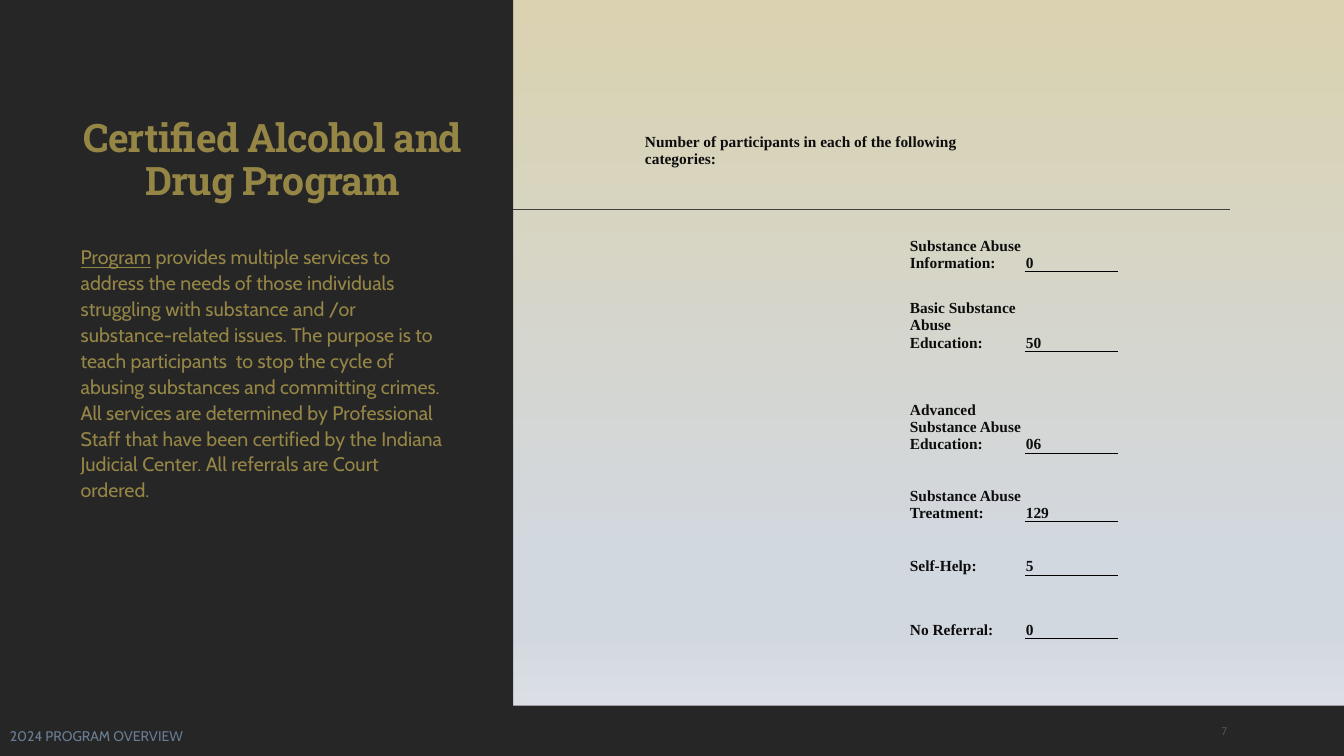
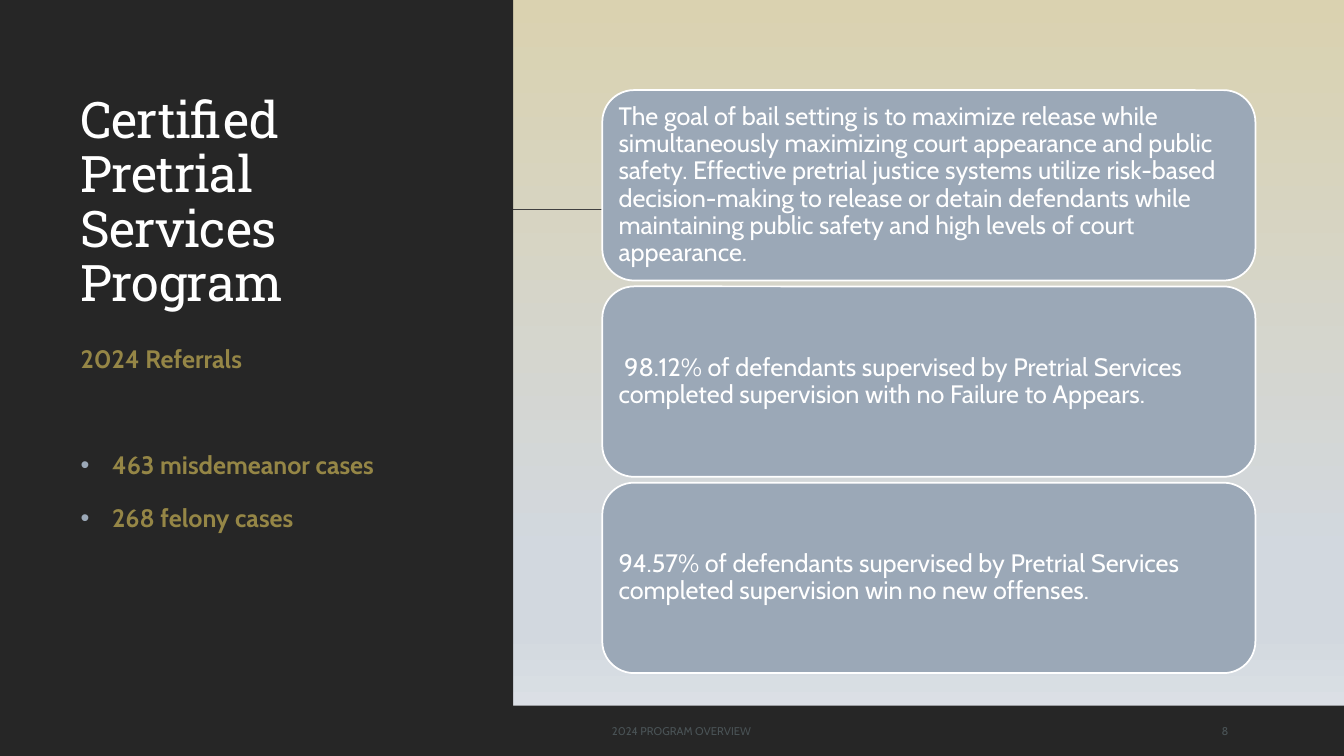
"""Builds two program overview slides: alcohol and drug services, and pretrial services."""
from lxml import etree
from pptx import Presentation
from pptx import util as u
from pptx.dml.color import RGBColor
from pptx.enum import shapes, text
from pptx.oxml import ns

Pt = u.Pt
CHARCOAL = RGBColor(0x26, 0x26, 0x26)
RULE_GRAY = RGBColor(0x40, 0x40, 0x40)
GOLD = RGBColor(0x95, 0x86, 0x46)
WHITE = RGBColor(0xFF, 0xFF, 0xFF)
BLACK = RGBColor(0x00, 0x00, 0x00)
TABLE_INK = RGBColor(0x0D, 0x0D, 0x0D)
STEEL = RGBColor(0x9B, 0xA8, 0xB7)
SLATE = RGBColor(0x6A, 0x7D, 0x93)
FOOTER_GRAY = RGBColor(0x4A, 0x53, 0x56)
SAND, MIST, PALE = (RGBColor(0xDA, 0xD2, 0xB0), RGBColor(0xD2, 0xD8, 0xDF),
                    RGBColor(0xE1, 0xE5, 0xE9))
BACKDROP = [(0, SAND), (74, MIST), (83, MIST), (100, PALE)]
HEADING_FONT, BODY_FONT, TABLE_FONT = "Roboto Slab", "Cabin", "Times New Roman"
SLIDE_W, SLIDE_H = 960, 540
MARGIN, TEXT_W = 50.4, 277.2
FOOTER = "2024 PROGRAM OVERVIEW"
NO_GRID_STYLE = "{2D5ABB26-0587-4C30-8999-92F81FD0307C}"

COLUMNS = [3.6, 42.5, 77, 29.5, 36.7, 82.8, 66.2]
ROWS = [27.4, 31, 25.2, 49, 56.9, 72.7, 49, 38.2, 45.4]
CATEGORIES = [
    ("Substance Abuse Information:", "0"),
    ("Basic Substance Abuse Education:", "50"),
    ("Advanced Substance Abuse Education:", "06"),
    ("Substance Abuse Treatment:", "129"),
    ("Self-Help:", "5"),
    ("No Referral:", "0"),
]
SERVICES = (
    " provides multiple services to address the needs of those individuals "
    "struggling with substance and /or substance-related issues. The purpose is to "
    "teach participants  to stop the cycle of abusing substances and committing "
    "crimes.  All services are determined by Professional Staff that have been "
    "certified by the Indiana Judicial Center. All referrals are Court ordered."
)
GOALS = [
    "The goal of bail setting is to maximize release while simultaneously maximizing "
    "court appearance and public safety. Effective pretrial justice systems utilize "
    "risk-based decision-making to release or detain defendants while maintaining "
    "public safety and high levels of court appearance.",
    " 98.12% of defendants supervised by Pretrial Services completed supervision with "
    "no Failure to Appears.",
    "94.57% of defendants supervised by Pretrial Services completed supervision win no "
    "new offenses.",
]


def add_child(parent, tag, **attributes):
    """Append a DrawingML element and return it."""
    return etree.SubElement(parent, ns.qn(tag), attributes)


def style_runs(paragraph, font, size, color, bold=False):
    """Format every run of a paragraph."""
    for run in paragraph.runs:
        run.font.name, run.font.size, run.font.bold = font, Pt(size), bold
        run.font.color.rgb = color


def place(shape, left, top, width, height):
    """Move and size a shape."""
    shape.left, shape.top, shape.width, shape.height = map(Pt, (left, top, width, height))


def paint_backdrop(master):
    """Give the master its vertical gradient."""
    fill = master.background.fill
    fill.gradient()
    fill.gradient_angle = 270
    stops = master._element.find(".//" + ns.qn("a:gsLst"))
    for stop in list(stops):
        stops.remove(stop)
    for percent, color in BACKDROP:
        stop = add_child(stops, "a:gs", pos=str(percent * 1000))
        add_child(stop, "a:srgbClr", val=str(color))


def add_band(slide, left, top, width, height):
    """Draw a plain dark rectangle."""
    band = slide.shapes.add_shape(shapes.MSO_SHAPE.RECTANGLE,
                                  Pt(left), Pt(top), Pt(width), Pt(height))
    band.shadow.inherit = False
    band.fill.solid()
    band.fill.fore_color.rgb = CHARCOAL
    band.line.fill.background()
    return band


def add_rule(slide, left, right, y):
    """Draw the thin horizontal rule."""
    rule = slide.shapes.add_connector(shapes.MSO_CONNECTOR.STRAIGHT,
                                      Pt(left), Pt(y), Pt(right), Pt(y))
    rule.line.color.rgb = RULE_GRAY
    rule.line.width = Pt(1)
    add_child(rule._element.spPr, "a:effectLst")
    return rule


def furnish_layout(layout, slide):
    """Build the shared bands and rule, then hand them to the layout."""
    furniture = [
        add_band(slide, 0, 504, SLIDE_W, 36),
        add_rule(slide, 94.5, 878.5, 149.5),
        add_band(slide, 0, 0, 366.5, SLIDE_H),
    ]
    for number, part in enumerate(furniture):
        part._element._nvXxPr.cNvPr.set("id", str(20 + number))
        layout.shapes._spTree.insert(2 + number, part._element)


def set_title(slide, wording, box, size, color, bold=False, align=None):
    """Fill, move and format the title placeholder."""
    title = slide.shapes.title
    place(title, *box)
    frame = title.text_frame
    frame.text = wording
    frame.auto_size = text.MSO_AUTO_SIZE.NONE
    frame.vertical_anchor = text.MSO_ANCHOR.BOTTOM
    heading = frame.paragraphs[0]
    heading.alignment = align or text.PP_ALIGN.LEFT
    heading.line_spacing = 0.9
    style_runs(heading, HEADING_FONT, size, color, bold)
    for run in heading.runs:
        run.font._element.set("spc", "-50")


def open_body(slide, top, height):
    """Place the body placeholder and return its text frame."""
    body = slide.placeholders[1]
    place(body, MARGIN, top, TEXT_W, height)
    body.text_frame.auto_size = text.MSO_AUTO_SIZE.NONE
    return body.text_frame


def format_body(paragraph, size, before=0, after=0, bold=False, bulleted=False):
    """Set a body paragraph's spacing, bullet and run format."""
    paragraph.line_spacing = 1.1
    paragraph.space_before, paragraph.space_after = Pt(before), Pt(after)
    style_runs(paragraph, BODY_FONT, size, GOLD, bold)
    indent = Pt(22.5) if bulleted else 0
    properties = paragraph._p.get_or_add_pPr()
    properties.set("marL", str(indent))
    properties.set("indent", str(-indent))
    if bulleted:
        add_child(add_child(properties, "a:buClr"), "a:srgbClr", val=str(STEEL))
        add_child(properties, "a:buChar", char="•")
    else:
        add_child(properties, "a:buNone")


def add_label(slide, wording, left, top, width, size=8, color=FOOTER_GRAY):
    """Add one line of footer text."""
    label = slide.shapes.add_textbox(Pt(left), Pt(top), Pt(width), Pt(28.8))
    frame = label.text_frame
    frame.word_wrap = True
    frame.vertical_anchor = text.MSO_ANCHOR.MIDDLE
    frame.text = wording
    style_runs(frame.paragraphs[0], BODY_FONT, size, color)


def add_page_number(slide, number):
    """Add the page number at the lower right."""
    add_label(slide, str(number), 865.5, 507.6, 61.2)


def write_cell(cell, wording):
    """Fill a table cell with bold text at its bottom."""
    cell.text = wording
    cell.vertical_anchor = text.MSO_ANCHOR.BOTTOM
    cell.margin_left = cell.margin_right = cell.margin_top = Pt(0.7)
    style_runs(cell.text_frame.paragraphs[0], TABLE_FONT, 11, TABLE_INK, True)


def underline_cell(cell):
    """Draw a thin bottom border."""
    properties = cell._tc.get_or_add_tcPr()
    border = add_child(properties, "a:lnB", w=str(Pt(0.5)))
    add_child(add_child(border, "a:solidFill"), "a:srgbClr", val=str(BLACK))
    properties.insert(0, border)


def add_participant_table(slide):
    """Build the table of participants by category."""
    frame = slide.shapes.add_table(len(ROWS), len(COLUMNS), Pt(460), Pt(61.6),
                                   Pt(sum(COLUMNS)), Pt(sum(ROWS)))
    table = frame.table
    table.first_row = table.horz_banding = False
    table._tbl.tblPr.find(ns.qn("a:tableStyleId")).text = NO_GRID_STYLE
    for column, width in zip(table.columns, COLUMNS):
        column.width = Pt(width)
    for row, height in zip(table.rows, ROWS):
        row.height = Pt(height)
    for cell in table.iter_cells():
        cell.fill.background()
        cell.margin_left = cell.margin_right = cell.margin_top = cell.margin_bottom = 0
    spans = [(0, 0, 1), (0, 3, 4), (1, 0, 5)]
    spans += [(row, 2, 3) for row in range(2, len(ROWS))]
    for row, first, last in spans:
        table.cell(row, first).merge(table.cell(row, last))
    write_cell(table.cell(1, 0), "Number of participants in each of the following categories:")
    for row, (category, count) in enumerate(CATEGORIES, start=3):
        write_cell(table.cell(row, 5), category)
        write_cell(table.cell(row, 6), count)
        underline_cell(table.cell(row, 6))


def add_goal_card(slide, wording, top):
    """Add a rounded card with one statement."""
    card = slide.shapes.add_shape(shapes.MSO_SHAPE.ROUNDED_RECTANGLE,
                                  Pt(430.2), Pt(top), Pt(466.5), Pt(136))
    card.shadow.inherit = False
    card.fill.solid()
    card.fill.fore_color.rgb = STEEL
    card.line.color.rgb = WHITE
    card.line.width = Pt(1.25)
    frame = card.text_frame
    frame.word_wrap = True
    frame.vertical_anchor = text.MSO_ANCHOR.MIDDLE
    frame.margin_left = frame.margin_right = frame.margin_top = frame.margin_bottom = Pt(5)
    frame.text = wording
    statement = frame.paragraphs[0]
    statement.alignment = text.PP_ALIGN.LEFT
    statement.line_spacing = 0.9
    style_runs(statement, BODY_FONT, 18, WHITE)


def build_drug_program(slide):
    """Fill the alcohol and drug program slide."""
    set_title(slide, "Certified Alcohol and Drug Program", (MARGIN, 51, 288.4, 98), 28,
              GOLD, bold=True, align=text.PP_ALIGN.CENTER)
    add_participant_table(slide)
    summary = open_body(slide, 170, 311).paragraphs[0]
    summary.text = "Program"
    summary.add_run().text = SERVICES
    format_body(summary, 14)
    summary.runs[0].font.underline = True
    add_label(slide, FOOTER, 0, 511.2, 420, 10, SLATE)
    add_page_number(slide, 7)


def build_pretrial_program(slide):
    """Fill the pretrial services slide."""
    set_title(slide, "Certified Pretrial Services Program", (MARGIN, 62, TEXT_W, 165),
              36, WHITE)
    referrals = open_body(slide, 239.5, 241)
    referrals.text = "2024 Referrals\n463 misdemeanor cases\n268 felony cases"
    heading, misdemeanors, felonies = referrals.paragraphs
    format_body(heading, 18, 12, 2, bold=True)
    format_body(misdemeanors, 18, 50, 2, bold=True, bulleted=True)
    format_body(felonies, 18, 12, 2, bold=True, bulleted=True)
    for position, goal in enumerate(GOALS):
        add_goal_card(slide, goal, 64.4 + 140.2 * position)
    add_label(slide, FOOTER, 430, 507.6, 420)
    add_page_number(slide, 8)


def main():
    """Create the presentation and save it."""
    deck = Presentation()
    deck.slide_width, deck.slide_height = Pt(SLIDE_W), Pt(SLIDE_H)
    paint_backdrop(deck.slide_master)
    layout = deck.slide_layouts[1]
    drug_slide, pretrial_slide = (deck.slides.add_slide(layout) for _ in range(2))
    furnish_layout(layout, drug_slide)
    build_drug_program(drug_slide)
    build_pretrial_program(pretrial_slide)
    deck.save("out.pptx")


if __name__ == "__main__":
    main()
